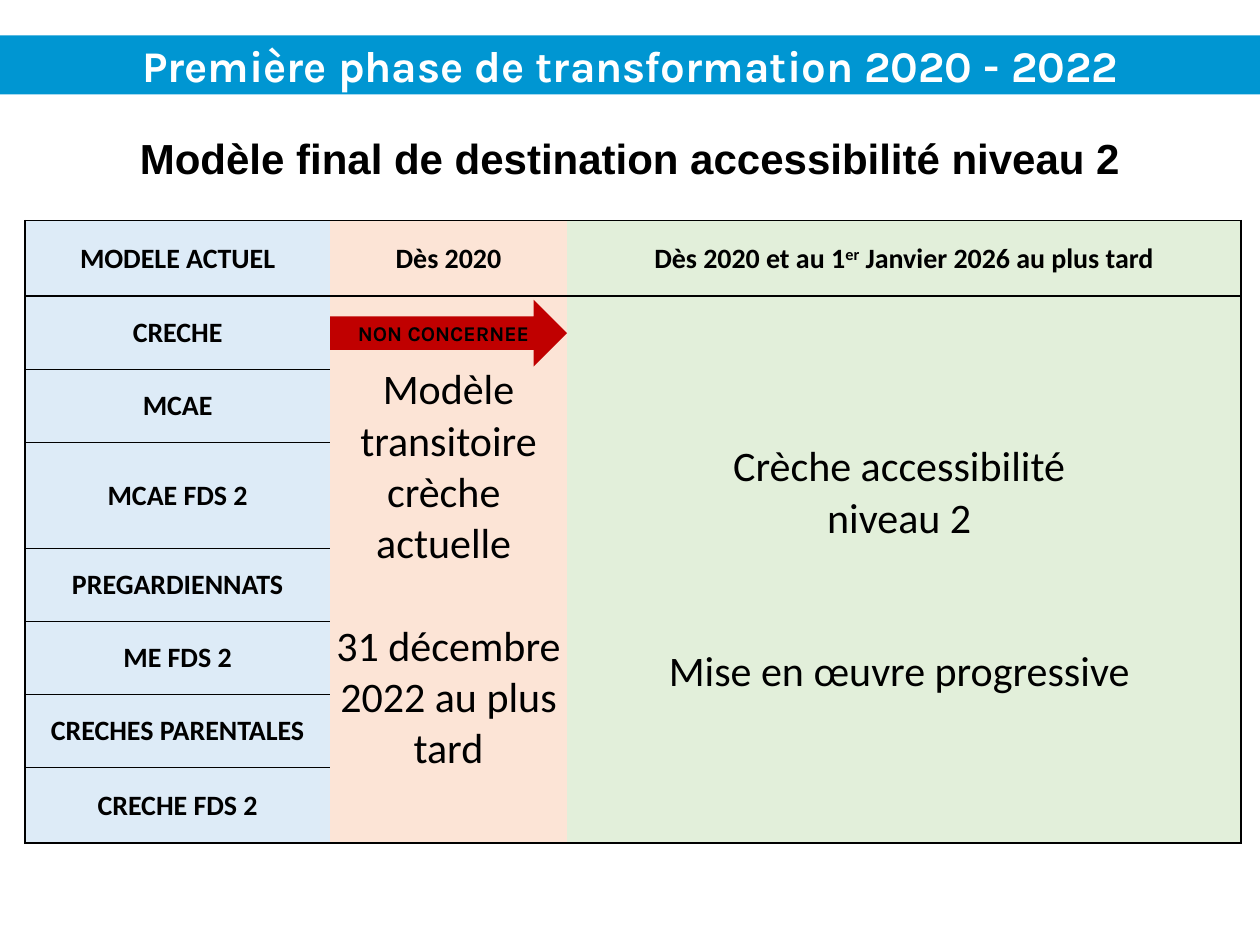
from lxml import etree
from pptx import Presentation
from pptx import util as u
from pptx.dml.color import RGBColor
from pptx.enum import shapes, text
from pptx.oxml import ns

BLACK, WHITE = "000000", "FFFFFF"
BANNER_BLUE, ARROW_RED = "0096D2", "C00000"
COLUMN_FILLS = ["DDEBF7", "FCE4D6", "E2EFDA"]
COLUMN_WIDTHS = [2.42, 1.88, 5.35]
ROW_HEIGHTS = [0.6, 0.58, 0.58, 0.84, 0.58, 0.58, 0.58, 0.6]
LINE = 29.3  # points taken by one line of 24 pt Calibri

CURRENT_MODELS = ["CRECHE", "MCAE", "MCAE FDS 2", "PREGARDIENNATS", "ME FDS 2",
                  "CRECHES PARENTALES", "CRECHE FDS 2"]
HEADINGS = [["MODELE ACTUEL"], ["Dès 2020"],
            ["Dès 2020 et au 1", "^er", " Janvier 2026 au plus tard"]]
TRANSITION = [("Modèle transitoire crèche ", 0), ("actuelle ", 0),
              ("31 décembre 2022 au plus tard", LINE)]
DESTINATION = [("Crèche accessibilité ", 0), ("niveau 2 ", 0),
               ("Mise en œuvre progressive ", 2 * LINE)]


def rgb(color):
    return RGBColor.from_string(color)


def set_border(cell, side, points):
    """Draw one cell edge (L, R, T or B); zero points hides it."""
    properties = cell._tc.get_or_add_tcPr()
    edge = etree.SubElement(properties, ns.qn(f"a:ln{side}"), w=str(u.Pt(points)))
    if points:
        fill = etree.SubElement(edge, ns.qn("a:solidFill"))
        etree.SubElement(fill, ns.qn("a:srgbClr"), val=BLACK)
    else:
        etree.SubElement(edge, ns.qn("a:noFill"))


class SlideBuilder:
    def __init__(self, slide):
        self.slide = slide

    def add_run(self, paragraph, words, font, size, color=BLACK, bold=True):
        """Add a run; a leading ^ makes it superscript."""
        run = paragraph.add_run()
        run.text = words.lstrip("^")
        run.font.name, run.font.size, run.font.bold = font, u.Pt(size), bold
        run.font.color.rgb = rgb(color)
        if words.startswith("^"):
            run._r.get_or_add_rPr().set("baseline", "30000")

    def title(self, words, left, top, width, height):
        banner = self.slide.shapes.title
        banner.left, banner.top = u.Inches(left), u.Inches(top)
        banner.width, banner.height = u.Inches(width), u.Inches(height)
        banner.fill.solid()
        banner.fill.fore_color.rgb = rgb(BANNER_BLUE)
        frame = banner.text_frame
        frame.auto_size = text.MSO_AUTO_SIZE.NONE
        frame.vertical_anchor = text.MSO_ANCHOR.MIDDLE
        frame.paragraphs[0].alignment = text.PP_ALIGN.CENTER
        self.add_run(frame.paragraphs[0], words, "Karla", 25, WHITE)

    def subtitle(self, words, left, top, width, height):
        box = self.slide.shapes.add_textbox(
            *map(u.Inches, (left, top, width, height)))
        box.text_frame.word_wrap = True
        paragraph = box.text_frame.paragraphs[0]
        paragraph.alignment = text.PP_ALIGN.CENTER
        self.add_run(paragraph, words, "Arial", 24)

    def table(self, left, top):
        rows, columns = len(ROW_HEIGHTS), len(COLUMN_WIDTHS)
        table = self.slide.shapes.add_table(
            rows, columns, u.Inches(left), u.Inches(top),
            u.Inches(sum(COLUMN_WIDTHS)), u.Inches(sum(ROW_HEIGHTS))).table
        table.first_row = table.horz_banding = False
        for column, width in zip(table.columns, COLUMN_WIDTHS):
            column.width = u.Inches(width)
        for row, height in zip(table.rows, ROW_HEIGHTS):
            row.height = u.Inches(height)
        for column in (1, 2):
            table.cell(1, column).merge(table.cell(rows - 1, column))
        for row in range(rows):
            for column in range(columns):
                self.format_cell(table.cell(row, column), row, column)
        return table

    def format_cell(self, cell, row, column):
        inner = 0.5 if column == 0 else 0
        last_row = len(ROW_HEIGHTS) - 1
        set_border(cell, "L", 1 if column == 0 else 0)
        set_border(cell, "R", 1 if column == len(COLUMN_WIDTHS) - 1 else 0)
        set_border(cell, "T", 1 if row < 2 else inner)
        set_border(cell, "B", 1 if row in (0, last_row) or cell.is_merge_origin
                   else inner)
        cell.fill.solid()
        cell.fill.fore_color.rgb = rgb(COLUMN_FILLS[column])
        cell.vertical_anchor = text.MSO_ANCHOR.MIDDLE
        cell.margin_left = cell.margin_right = cell.margin_top = u.Inches(0.01)
        cell.margin_bottom = 0

    def label(self, cell, parts):
        paragraph = cell.text_frame.paragraphs[0]
        paragraph.alignment = text.PP_ALIGN.CENTER
        for part in parts:
            self.add_run(paragraph, part, "Calibri", 16)

    def statement(self, cell, lines):
        """Fill a tall cell with (words, space before) paragraphs."""
        frame = cell.text_frame
        for index, (words, space) in enumerate(lines):
            paragraph = frame.add_paragraph() if index else frame.paragraphs[0]
            paragraph.alignment = text.PP_ALIGN.CENTER
            if space:
                paragraph.space_before = u.Pt(space)
            self.add_run(paragraph, words, "Calibri", 24, bold=False)

    def arrow(self, words, left, top, width, height):
        arrow = self.slide.shapes.add_shape(
            shapes.MSO_SHAPE.RIGHT_ARROW,
            *map(u.Inches, (left, top, width, height)))
        arrow.shadow.inherit = False
        arrow.fill.solid()
        arrow.fill.fore_color.rgb = rgb(ARROW_RED)
        arrow.line.fill.background()
        frame = arrow.text_frame
        frame.margin_left = u.Inches(0.22)
        frame.vertical_anchor = text.MSO_ANCHOR.MIDDLE
        frame.paragraphs[0].alignment = text.PP_ALIGN.LEFT
        self.add_run(frame.paragraphs[0], words, "Karla", 12)


def main():
    deck = Presentation()
    deck.slide_width, deck.slide_height = u.Inches(10), u.Inches(7.5)
    builder = SlideBuilder(deck.slides.add_slide(deck.slide_layouts[5]))

    builder.title("Première phase de transformation 2020 - 2022", 0, 0.28, 10, 0.47)
    builder.subtitle("Modèle final de destination accessibilité niveau 2",
                     0, 1, 10, 0.5)
    phases = builder.table(0.2, 1.75)
    for column, heading in enumerate(HEADINGS):
        builder.label(phases.cell(0, column), heading)
    for row, model in enumerate(CURRENT_MODELS, start=1):
        builder.label(phases.cell(row, 0), [model])
    builder.statement(phases.cell(1, 1), TRANSITION)
    builder.statement(phases.cell(1, 2), DESTINATION)
    builder.arrow("NON CONCERNEE", 2.62, 2.38, 1.88, 0.53)

    deck.save("out.pptx")


if __name__ == "__main__":
    main()
